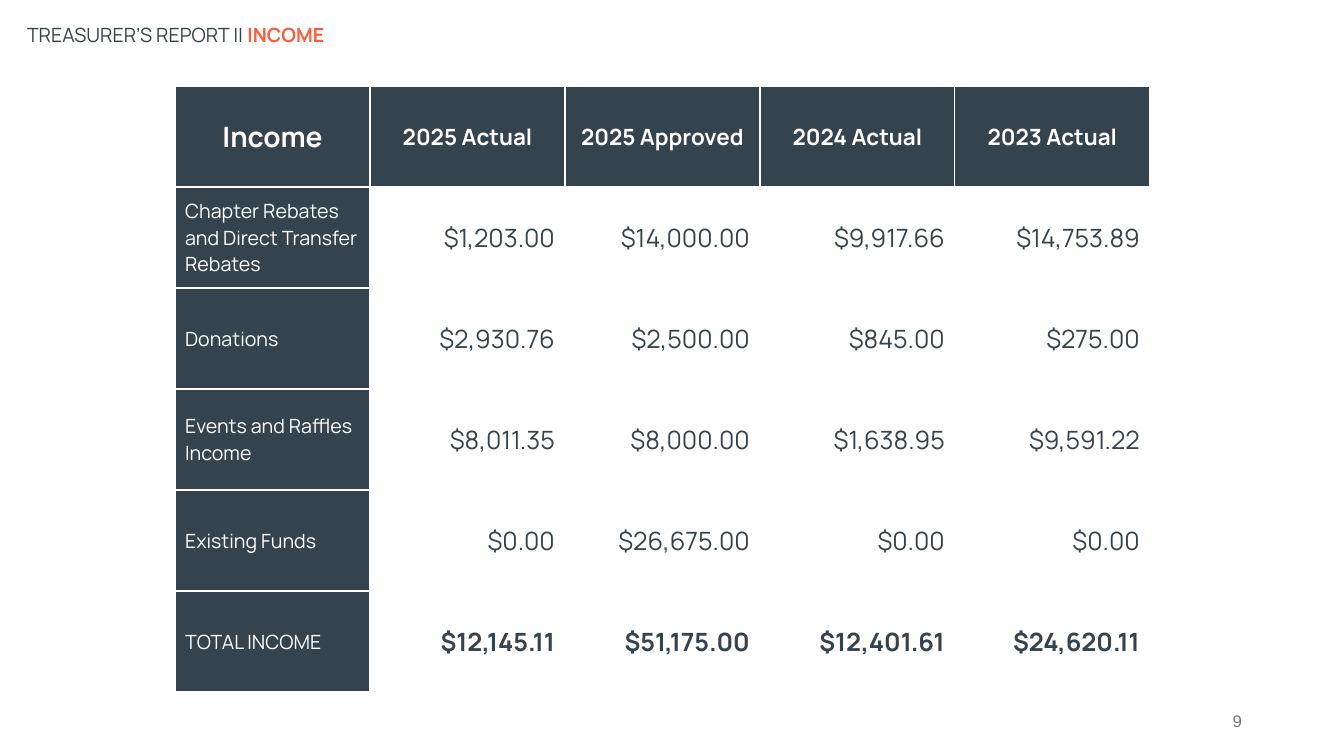
import pptx
import pptx.util
import pptx.dml.color
import pptx.enum.text
import lxml.etree

RGB = pptx.dml.color.RGBColor
SLATE = RGB(0x35, 0x43, 0x4F)
CORAL = RGB(0xFA, 0x5E, 0x3E)
GRAY = RGB(0x75, 0x75, 0x75)
WHITE = RGB(0xFF, 0xFF, 0xFF)
ALIGN = pptx.enum.text.PP_ALIGN
MIDDLE = pptx.enum.text.MSO_ANCHOR.MIDDLE
PX = 914400 / 100.8


def px(*sizes):
    return [round(size * PX) for size in sizes]


def write(para, text, color, size, bold=False, face="Manrope"):
    run = para.add_run()
    run.text = text
    style = {"name": face, "size": pptx.util.Pt(size), "bold": bold}
    for key, value in style.items():
        setattr(run.font, key, value)
    run.font.color.rgb = color


deck = pptx.Presentation()
deck.slide_width, deck.slide_height = px(1344, 756)
slide = deck.slides.add_slide(deck.slide_layouts[5])

title = slide.shapes.title
title.left, title.top, title.width, title.height = px(17, 15, 1159, 40)
number = slide.shapes.add_textbox(*px(950, 701, 302, 40))
for shape, align in ((title, ALIGN.JUSTIFY), (number, ALIGN.RIGHT)):
    frame = shape.text_frame
    frame.word_wrap = True
    frame.auto_size = pptx.enum.text.MSO_AUTO_SIZE.NONE
    frame.vertical_anchor = MIDDLE
    frame.paragraphs[0].alignment = align
head = title.text_frame.paragraphs[0]
write(head, "TREASURER’S REPORT || ", SLATE, 14)
write(head, "INCOME", CORAL, 14, True)
write(number.text_frame.paragraphs[0], "9", GRAY, 12, face="Arial")

ROWS = [
    ["Income", "2025 Actual", "2025 Approved", "2024 Actual", "2023 Actual"],
    ["Chapter Rebates and Direct Transfer Rebates",
     "$1,203.00", "$14,000.00", "$9,917.66", "$14,753.89"],
    ["Donations", "$2,930.76", "$2,500.00", "$845.00", "$275.00"],
    ["Events and Raffles Income",
     "$8,011.35", "$8,000.00", "$1,638.95", "$9,591.22"],
    ["Existing Funds", "$0.00", "$26,675.00", "$0.00", "$0.00"],
    ["TOTAL INCOME", "$12,145.11", "$51,175.00", "$12,401.61", "$24,620.11"],
]
LAST = len(ROWS) - 1
LINE = (
    '<a:{0} xmlns:a="http://schemas.openxmlformats.org/drawingml/2006/main" '
    'w="12700"><a:solidFill><a:srgbClr val="{1}"/></a:solidFill></a:{0}>'
)

table = slide.shapes.add_table(
    len(ROWS), len(ROWS[0]), *px(175, 86, 195 * 5, 101 * 6)
).table
for col in table.columns:
    col.width = px(195)[0]
for r, row in enumerate(ROWS):
    table.rows[r].height = px(101)[0]
    for c, text in enumerate(row):
        cell = table.cell(r, c)
        cell.vertical_anchor = MIDDLE
        props = cell._tc.get_or_add_tcPr()
        for side in ("lnL", "lnR", "lnT", "lnB"):
            props.append(lxml.etree.fromstring(LINE.format(side, WHITE)))
        if r == 0 or c == 0:
            cell.fill.solid()
            cell.fill.fore_color.rgb = SLATE
        else:
            cell.fill.background()
        if r == 0:
            align, color, size, bold = ALIGN.CENTER, WHITE, 16 if c else 20, True
        elif c == 0:
            align, color, size, bold = ALIGN.LEFT, WHITE, 14, False
        else:
            align, color, size, bold = ALIGN.RIGHT, SLATE, 18, r == LAST
        para = cell.text_frame.paragraphs[0]
        para.alignment = align
        write(para, text, color, size, bold)

deck.save("out.pptx")
